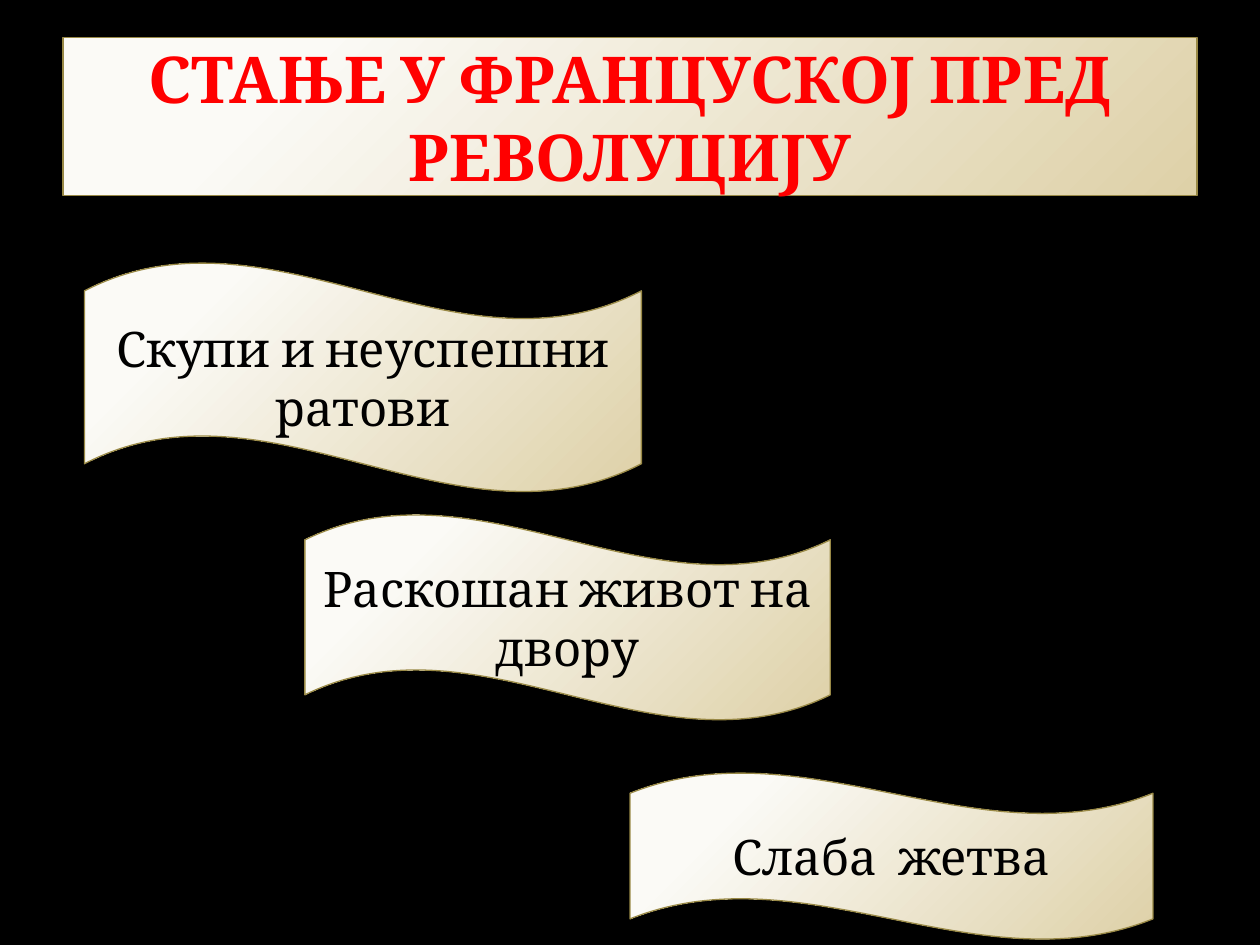
from lxml.etree import SubElement
from pptx import Presentation
from pptx.dml.color import RGBColor
from pptx.enum.shapes import MSO_SHAPE
from pptx.enum.text import MSO_ANCHOR, MSO_AUTO_SIZE, PP_ALIGN
from pptx.oxml.ns import qn
from pptx.util import Inches, Pt

COLORS = {
    "background": "000000",
    "cream": "FBFAF6",
    "sand": "DED1A8",
    "outline": "998946",
    "title": "FF0000",
    "text": "000000",
    "shadow": "000000",
}
TITLE_FONT = {"name": "Cambria", "size": Pt(36.9), "bold": True}
CAUSE_FONT = {"name": "Cambria", "size": Pt(28), "bold": False}

TITLE = "СТАЊЕ У ФРАНЦУСКОЈ ПРЕД РЕВОЛУЦИЈУ"
TITLE_BOX = (0.5, 0.3, 9, 1.25)
CAUSES = [
    ("Скупи и неуспешни ратови", (0.67, 2.08, 4.42, 1.83)),
    ("Раскошан живот на двору", (2.42, 4.08, 4.17, 1.64)),
    ("Слаба  жетва", (5, 6.13, 4.15, 1.33)),
]


def color(name):
    return RGBColor.from_string(COLORS[name])


def fill_radial(shape):
    """Fill with a circular gradient centred beyond the top left corner."""
    shape.fill.gradient()
    for stop, (position, name) in zip(
        shape.fill.gradient_stops, [(0.2, "cream"), (1, "sand")]
    ):
        stop.position = position
        stop.color.rgb = color(name)
    gradient = shape._element.spPr.find(qn("a:gradFill"))
    linear = gradient.find(qn("a:lin"))
    if linear is not None:
        gradient.remove(linear)
    circle = SubElement(gradient, qn("a:path"), path="circle")
    SubElement(circle, qn("a:fillToRect"), l="-15000", t="-15000", r="115000", b="115000")


def add_shadow(shape):
    shape.shadow.inherit = False
    effects = shape._element.spPr.find(qn("a:effectLst"))
    shadow = SubElement(
        effects, qn("a:outerShdw"),
        blurRad=str(Pt(10.2)), dist=str(Pt(8)), dir=str(45 * 60000),
        algn="tl", rotWithShape="0",
    )
    shade = SubElement(shadow, qn("a:srgbClr"), val=COLORS["shadow"])
    SubElement(shade, qn("a:alpha"), val="35000")


def format_panel(shape, text, font_values, font_color):
    fill_radial(shape)
    shape.line.color.rgb = color("outline")
    shape.line.width = Pt(0.75)
    add_shadow(shape)
    frame = shape.text_frame
    frame.text = text
    frame_values = {
        "word_wrap": True,
        "auto_size": MSO_AUTO_SIZE.NONE,
        "vertical_anchor": MSO_ANCHOR.MIDDLE,
    }
    for name, value in frame_values.items():
        setattr(frame, name, value)
    paragraph = frame.paragraphs[0]
    paragraph.alignment = PP_ALIGN.CENTER
    font = paragraph.runs[0].font
    for name, value in font_values.items():
        setattr(font, name, value)
    font.color.rgb = color(font_color)


def place_title(slide, box):
    title = slide.shapes.title
    for name, value in zip(("left", "top", "width", "height"), box):
        setattr(title, name, Inches(value))
    format_panel(title, TITLE, TITLE_FONT, "title")


def add_cause(slide, text, box):
    wave = slide.shapes.add_shape(MSO_SHAPE.WAVE, *map(Inches, box))
    format_panel(wave, text, CAUSE_FONT, "text")


def main():
    presentation = Presentation()
    presentation.slide_width = Inches(10)
    presentation.slide_height = Inches(7.5)
    slide = presentation.slides.add_slide(presentation.slide_layouts.get_by_name("Title Only"))
    slide.background.fill.solid()
    slide.background.fill.fore_color.rgb = color("background")
    place_title(slide, TITLE_BOX)
    for text, box in CAUSES:
        add_cause(slide, text, box)
    presentation.save("out.pptx")


if __name__ == "__main__":
    main()
